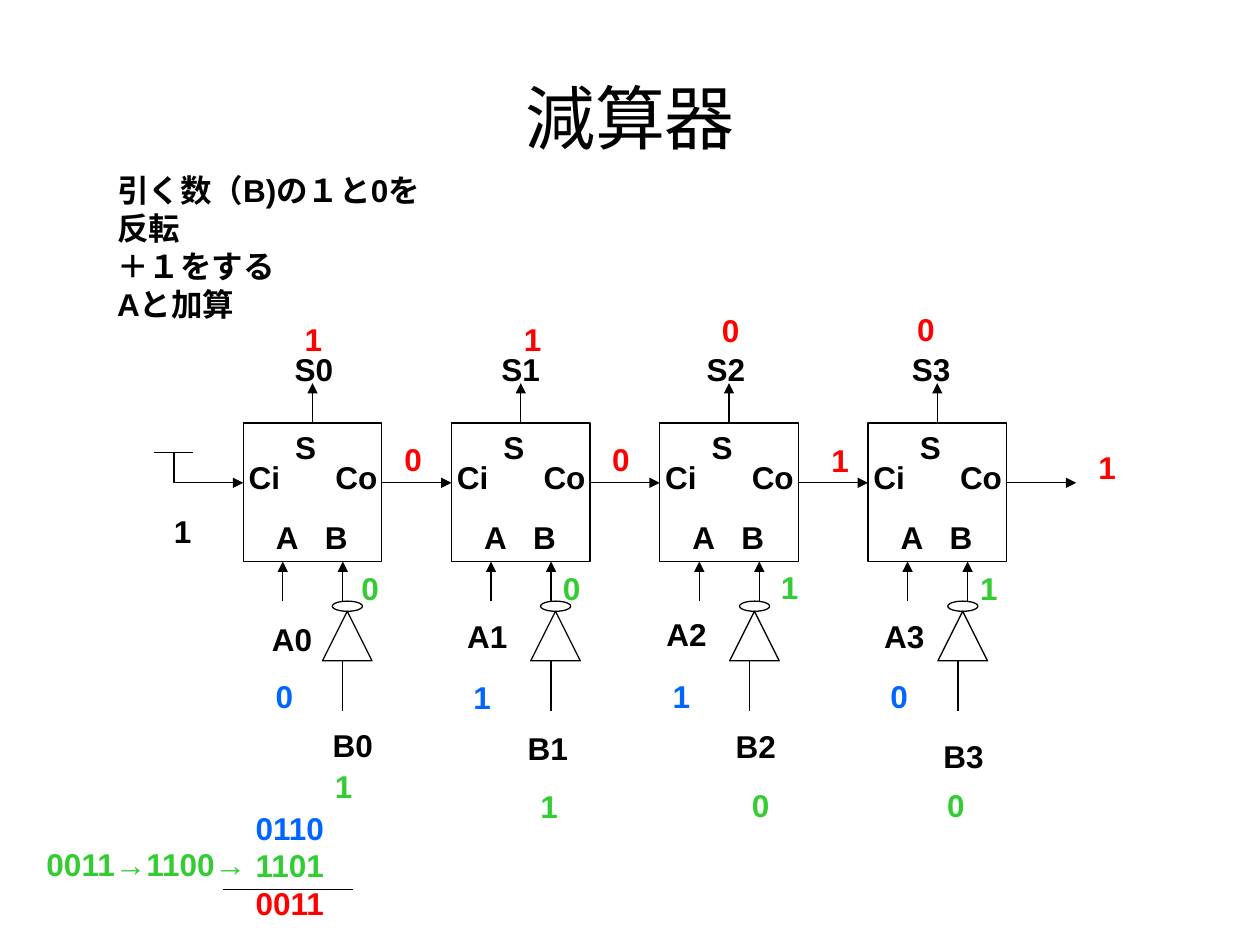
import pptx
import pptx.dml.color
import pptx.enum.shapes
import pptx.enum.text
import pptx.oxml
import pptx.oxml.ns
import pptx.util
from dataclasses import dataclass

Pt = pptx.util.Pt
RGBColor = pptx.dml.color.RGBColor
Shapes = pptx.enum.shapes.MSO_SHAPE
Align = pptx.enum.text.PP_ALIGN
Anchor = pptx.enum.text.MSO_ANCHOR

BLACK = RGBColor(0x00, 0x00, 0x00)
BLUE = RGBColor(0x00, 0x66, 0xFF)
GREEN = RGBColor(0x33, 0xCC, 0x33)
RED = RGBColor(0xFF, 0x00, 0x00)

ADDER_SIDE = 79.2
ADDER_TOP = 241.7
FIRST_LEFT = 139
PITCH = 119
LABEL_HEIGHT = 28.8
DIGIT_SIZE = (24.5, 50.4)
PORTS = [
    ("S", 22.5, -0.5, 27), ("Co", 45.5, 16.5, 38), ("Ci", -4, 16.5, 32),
    ("A", 11.5, 51, 27), ("B", 39.5, 51, 32),
]
PORT_ARROWS = [
    (-39.6, 34.2, 0, 34.2), (39.6, 0, 39.6, -22.8),
    (22.6, 101.8, 22.6, 79.2), (56.9, 101.8, 56.9, 79.2),
]


@dataclass
class Stage:
    names: list
    digits: list
    inverter_left: float


STAGES = [
    Stage([("A0", 9.3, 109), ("B0", 44, 169.5), ("S0", 22.3, -45)],
          [("0", 11.5, 141.5, BLUE), ("1", 45.3, 193, GREEN), ("1", 28, -62.5, RED),
           ("0", 85, 6, RED), ("0", 60.4, 80, GREEN)], 45.3),
    Stage([("A1", 1.9, 107.5), ("B1", 36.5, 171.5), ("S1", 21.4, -45)],
          [("1", 5.5, 142, BLUE), ("1", 43.7, 204.7, GREEN), ("1", 34.3, -62.5, RED),
           ("0", 84.7, 6, RED), ("0", 56.6, 80, GREEN)], 45.3),
    Stage([("A2", -3.3, 106), ("B2", 36.3, 170), ("S2", 19.7, -45)],
          [("1", 0.3, 141.5, BLUE), ("0", 45.6, 204, GREEN), ("0", 28.4, -67.5, RED),
           ("1", 91, 6.5, RED), ("1", 62.2, 79.5, GREEN)], 40),
    Stage([("A3", 2.2, 107.5), ("B3", 36, 176), ("S3", 18, -45)],
          [("0", 5.8, 141.5, BLUE), ("0", 38.2, 204, GREEN), ("0", 21, -68, RED),
           ("1", 124.6, 11, RED), ("1", 57, 80, GREEN)], 40),
]


def add_text(slide, lines, left, top, width, height, colors=(BLACK,), size=18, bold=True):
    shape = slide.shapes.add_textbox(Pt(left), Pt(top), Pt(width), Pt(height))
    text_frame = shape.text_frame
    text_frame.word_wrap = True
    text_frame.margin_right = 0
    text_frame.text = "\n".join(lines)
    for index, paragraph in enumerate(text_frame.paragraphs):
        font = paragraph.runs[0].font
        font.name = "Arial"
        font.size = Pt(size)
        font.bold = bold
        font.color.rgb = colors[index % len(colors)]
    return shape


def add_outline(slide, kind, left, top, width, height):
    shape = slide.shapes.add_shape(kind, Pt(left), Pt(top), Pt(width), Pt(height))
    shape.shadow.inherit = False
    shape.fill.background()
    shape.line.color.rgb = BLACK
    shape.line.width = Pt(0.75)


def add_line(slide, start_x, start_y, end_x, end_y, arrow=False):
    connector = slide.shapes.add_connector(
        pptx.enum.shapes.MSO_CONNECTOR.STRAIGHT,
        Pt(start_x), Pt(start_y), Pt(end_x), Pt(end_y))
    connector.line.color.rgb = BLACK
    connector.line.width = Pt(0.75)
    if arrow:
        namespace = pptx.oxml.ns.nsdecls("a")
        connector.line._get_or_add_ln().append(
            pptx.oxml.parse_xml(f'<a:tailEnd {namespace} type="triangle"/>'))
    properties = connector._element.spPr
    properties.append(properties.makeelement(pptx.oxml.ns.qn("a:effectLst"), {}))


def add_title(slide, left, top, width, height):
    shape = add_text(slide, ["減算器"], left, top, width, height, size=40, bold=False)
    shape.text_frame.margin_right = Pt(7.2)
    shape.text_frame.vertical_anchor = Anchor.MIDDLE
    shape.text_frame.paragraphs[0].alignment = Align.CENTER


def add_adder(slide, left, top):
    add_outline(slide, Shapes.RECTANGLE, left, top, ADDER_SIDE, ADDER_SIDE)
    for name, x, y, width in PORTS:
        add_text(slide, [name], left + x, top + y, width, LABEL_HEIGHT)
    for start_x, start_y, end_x, end_y in PORT_ARROWS:
        add_line(slide, left + start_x, top + start_y, left + end_x, top + end_y, arrow=True)


def add_inverter(slide, left, top):
    add_outline(slide, Shapes.ISOSCELES_TRIANGLE, left, top, 28.3, 28.3)
    add_outline(slide, Shapes.OVAL, left + 5.6, top - 5.8, 17.2, 5.8)
    add_line(slide, left + 11.5, top + 28.5, left + 11.5, top + 56.8)


def add_stage(slide, stage, left, top):
    add_adder(slide, left, top)
    add_inverter(slide, left + stage.inverter_left, top + 107.6)
    for name, x, y in stage.names:
        add_text(slide, [name], left + x, top + y, 42, LABEL_HEIGHT)
    for digit, x, y, color in stage.digits:
        add_text(slide, [digit], left + x, top + y, *DIGIT_SIZE, colors=(color,))


def add_constant_carry(slide, left, top):
    add_line(slide, left, top, left + 22.5, top)
    add_line(slide, left + 11.4, top, left + 11.4, top + 17.2)
    add_text(slide, ["1"], left + 4.3, top + 30.2, 24.5, LABEL_HEIGHT)


def add_worked_sum(slide, left, top):
    add_text(slide, ["0011→1100→"], left, top + 21, 130, LABEL_HEIGHT, colors=(GREEN,))
    add_text(slide, ["0110", "1101", "0011"], left + 119.5, top, 58.3, 72,
             colors=(BLUE, GREEN, RED))
    add_line(slide, left + 108, top + 49.7, left + 182, top + 49.7)


def main():
    presentation = pptx.Presentation()
    presentation.slide_width = Pt(720)
    presentation.slide_height = Pt(540)
    slide = presentation.slides.add_slide(presentation.slide_layouts[6])
    add_title(slide, 36, 21.6, 648, 90)
    add_text(slide, ["引く数（B)の１と0を反転", "＋１をする", "Aと加算"], 59.8, 94.3, 187, 93)
    for index, stage in enumerate(STAGES):
        add_stage(slide, stage, FIRST_LEFT + index * PITCH, ADDER_TOP)
    carry_out = FIRST_LEFT + len(STAGES) * PITCH
    carry_y = ADDER_TOP + 34.2
    add_line(slide, carry_out - PITCH + ADDER_SIDE, carry_y, carry_out, carry_y, arrow=True)
    add_constant_carry(slide, 88, 258.7)
    add_worked_sum(slide, 19.5, 458.6)
    presentation.save("out.pptx")


if __name__ == "__main__":
    main()
